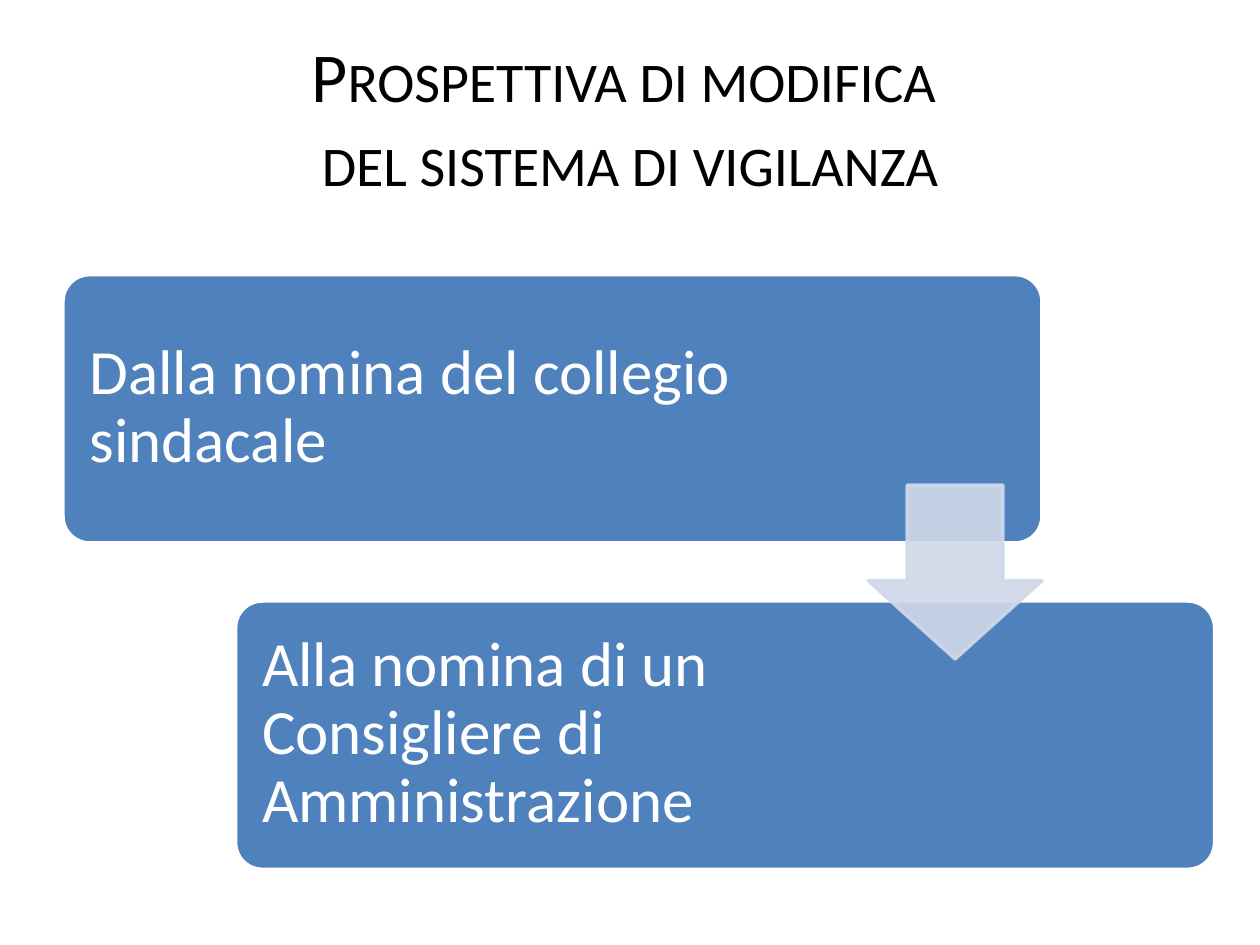
from pptx import Presentation
from pptx.dml.color import RGBColor
from pptx.enum.shapes import MSO_SHAPE
from pptx.enum.text import MSO_ANCHOR, PP_ALIGN
from pptx.util import Inches, Pt
from lxml import etree

ROUNDED, DOWN_ARROW = MSO_SHAPE.ROUNDED_RECTANGLE, MSO_SHAPE.DOWN_ARROW
MIDDLE, CENTER, LEFT = MSO_ANCHOR.MIDDLE, PP_ALIGN.CENTER, PP_ALIGN.LEFT
DRAWING = "{http://schemas.openxmlformats.org/drawingml/2006/main}"
COLORS = {"blue": "4F81BD", "pale": "D0D8E8", "white": "FFFFFF", "black": "000000"}

deck = Presentation()
deck.slide_width, deck.slide_height = Inches(10), Inches(7.5)
page = deck.slides.add_slide(deck.slide_layouts[6])


def add_figure(preset, area, adjustments, fill, line):
    figure = page.shapes.add_shape(preset, *map(Inches, area))
    for index, value in enumerate(adjustments):
        figure.adjustments[index] = value
    figure.shadow.inherit = False
    figure.fill.solid()
    figure.fill.fore_color.rgb = RGBColor.from_string(COLORS[fill])
    figure.line.color.rgb = RGBColor.from_string(COLORS[line])
    figure.line.width = Pt(2)
    return figure


def add_text(text, area, size, color, alignment, inset):
    """Add a wrapped, vertically centred text box and return its paragraph."""
    frame = page.shapes.add_textbox(*map(Inches, area)).text_frame
    frame.word_wrap = True
    frame.vertical_anchor = MIDDLE
    frame.margin_left = frame.margin_right = Inches(inset)
    frame.margin_top = frame.margin_bottom = Inches(inset)
    frame.text = text
    para = frame.paragraphs[0]
    para.alignment = alignment
    for span in para.runs:
        span.font.name = "Calibri"
        span.font.size = Pt(size)
        span.font.color.rgb = RGBColor.from_string(COLORS[color])
    return para


title = add_text("Prospettiva di modifica \vdel sistema di vigilanza",
                 (0.5, 0.3, 9, 1.25), 40, "black", CENTER, 0.05)
for span in title.runs:
    span.font._element.set("cap", "small")

# Two steps, each one shifted right and down from the one before
LEFT_EDGE, TOP_EDGE = 0.5, 2.18
STEP_RIGHT, STEP_DOWN = 1.37, 2.59
BOX_WIDTH, BOX_HEIGHT, PADDING = 7.77, 2.13, 0.06
steps = [
    ("Dalla nomina del collegio sindacale", 5.58),
    ("Alla nomina di un Consigliere di Amministrazione", 4.9),
]
for index, (text, text_width) in enumerate(steps):
    left = LEFT_EDGE + index * STEP_RIGHT
    top = TOP_EDGE + index * STEP_DOWN
    add_figure(ROUNDED, (left, top, BOX_WIDTH, BOX_HEIGHT), [0.1], "blue", "white")
    label = add_text(text, (left + PADDING, top + PADDING, text_width, 2),
                     36, "white", LEFT, 0.15)
    label.line_spacing = 0.9

ARROW_SIZE = 1.38
arrow = add_figure(DOWN_ARROW, (6.89, 3.85, ARROW_SIZE, ARROW_SIZE),
                   [0.55, 0.45], "pale", "pale")
for color in arrow._element.spPr.iter(DRAWING + "srgbClr"):
    etree.SubElement(color, DRAWING + "alpha", val="90000")

deck.save("out.pptx")
